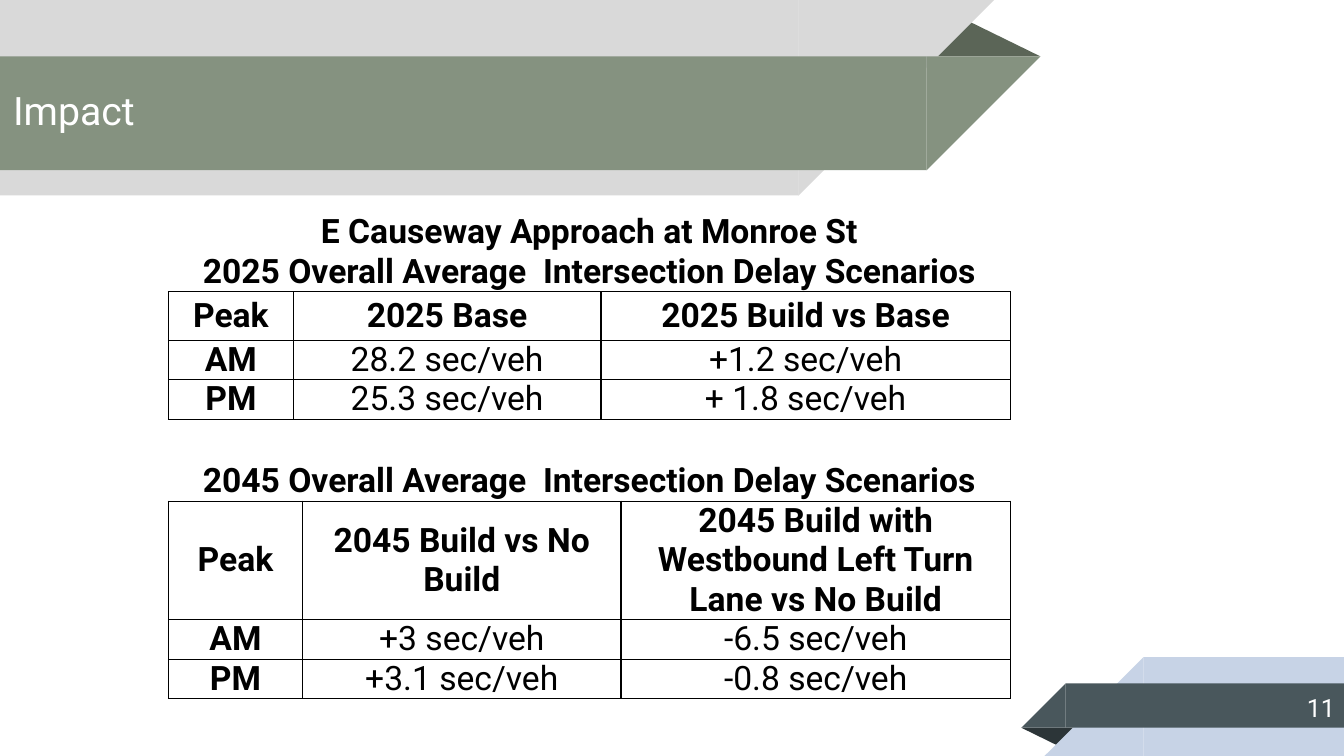
from dataclasses import dataclass

from lxml import etree
from pptx import Presentation
from pptx.dml.color import RGBColor
from pptx.enum.shapes import MSO_SHAPE
from pptx.enum.text import MSO_ANCHOR, PP_ALIGN
from pptx.oxml.ns import qn
from pptx.slide import Slide
from pptx.util import Inches, Pt

RECTANGLE = MSO_SHAPE.RECTANGLE
RIGHT_TRIANGLE = MSO_SHAPE.RIGHT_TRIANGLE
TRIANGLE = MSO_SHAPE.ISOSCELES_TRIANGLE
MIDDLE, BOTTOM, TOP = MSO_ANCHOR.MIDDLE, MSO_ANCHOR.BOTTOM, MSO_ANCHOR.TOP
LEFT, CENTER, RIGHT = PP_ALIGN.LEFT, PP_ALIGN.CENTER, PP_ALIGN.RIGHT

FONT = "Roboto"
COLORS = {
    "grey": "D9D9D9", "green": "859280", "green fold": "5B6557",
    "blue": "C7D3E6", "slate": "49575C", "slate fold": "2C3538",
    "white": "FFFFFF", "black": "000000",
}

# The slide is a grid of 160 columns by 90 rows of square cells.
SLIDE_WIDTH, SLIDE_HEIGHT = Inches(13.33), Inches(7.5)
GRID_COLUMNS = 160
CELL = SLIDE_HEIGHT / 90
LINE_ROWS = 4.68
TITLE_ROWS = 2
HEADER_ROW = TITLE_ROWS


@dataclass(frozen=True)
class Fold:
    left: float
    top: float
    width: float
    height: float
    color: str
    rotation: int


@dataclass(frozen=True)
class Band:
    """A bar from a slide edge to its slanted end, which starts at column `inner`."""
    inner: float
    top: float
    height: float
    color: str
    from_left: bool


@dataclass(frozen=True)
class DelayTable:
    top: float
    columns: tuple[float, ...]
    header_rows: float
    titles: tuple[str, str]
    body: tuple[tuple[str, str, str], ...]


@dataclass(frozen=True)
class Label:
    text: str
    left: float
    top: float
    width: float
    height: float
    size: int
    align: PP_ALIGN
    anchor: MSO_ANCHOR
    margins: tuple[float, float]


DECORATION = (
    Fold(110.16, 2.16, 13.68, 4.56, "green fold", 0),
    Band(95.04, 0, 23.28, "grey", True),
    Band(110.28, 6.72, 13.56, "green", True),
    Fold(121.56, 86.64, 6.84, 2.28, "slate fold", 180),
    Band(136.08, 78.24, 11.76, "blue", False),
    Band(126.84, 81.36, 5.28, "slate", False),
)
TABLE_LEFT = 20.04
TABLES = (
    DelayTable(25.32, (14.88, 36.6, 48.72), 5.76,
               ("E Causeway Approach at Monroe St",
                "2025 Overall Average  Intersection Delay Scenarios"),
               (("Peak", "2025 Base", "2025 Build vs Base"),
                ("AM", "28.2 sec/veh", "+1.2 sec/veh"),
                ("PM", "25.3 sec/veh", "+ 1.8 sec/veh"))),
    DelayTable(50.28, (15.96, 37.92, 46.32), 3 * LINE_ROWS,
               ("", "2045 Overall Average  Intersection Delay Scenarios"),
               (("Peak", "2045 Build vs No Build",
                 "2045 Build with Westbound Left Turn Lane vs No Build"),
                ("AM", "+3 sec/veh", "-6.5 sec/veh"),
                ("PM", "+3.1 sec/veh", "-0.8 sec/veh"))),
)
LABELS = (
    Label("Impact", 0, 6.36, 129.36, 13.44, 28, LEFT, MIDDLE, (0.13, 0.13)),
    Label("11", 127.08, 81.84, 33, 4.8, 18, RIGHT, TOP, (0.1, 0.05)),
)


def grid(*cells: float) -> list[int]:
    return [round(count * CELL) for count in cells]


def add_filled_shape(slide: Slide, kind: MSO_SHAPE, box: tuple[float, ...], color: str,
                     rotation: int = 0, flip: bool = False):
    shape = slide.shapes.add_shape(kind, *grid(*box))
    shape.shadow.inherit = False
    shape.fill.solid()
    shape.fill.fore_color.rgb = RGBColor.from_string(COLORS[color])
    shape.line.fill.background()
    shape.rotation = rotation
    if flip:
        shape._element.spPr.find(qn("a:xfrm")).set("flipH", "1")
    return shape


def add_fold(slide: Slide, fold: Fold) -> None:
    box = (fold.left, fold.top, fold.width, fold.height)
    shape = add_filled_shape(slide, TRIANGLE, box, fold.color, fold.rotation)
    shape.adjustments[0] = 0.32


def add_band(slide: Slide, band: Band) -> None:
    bar_left, bar_width = (0, band.inner) if band.from_left else (
        band.inner, GRID_COLUMNS - band.inner)
    tip_left = band.inner if band.from_left else band.inner - band.height
    rotation = 180 if band.from_left else 0
    add_filled_shape(slide, RECTANGLE, (bar_left, band.top, bar_width, band.height), band.color)
    add_filled_shape(slide, RIGHT_TRIANGLE, (tip_left, band.top, band.height, band.height),
                     band.color, rotation, flip=True)


def format_text(text_frame, size: int, color: str, align: PP_ALIGN, bold: bool = False) -> None:
    for paragraph in text_frame.paragraphs:
        paragraph.alignment = align
        for run in paragraph.runs:
            run.font.name = FONT
            run.font.size = Pt(size)
            run.font.bold = bold
            run.font.color.rgb = RGBColor.from_string(COLORS[color])


def add_label(slide: Slide, label: Label) -> None:
    box = slide.shapes.add_textbox(*grid(label.left, label.top, label.width, label.height))
    text_frame = box.text_frame
    text_frame.word_wrap = True
    text_frame.vertical_anchor = label.anchor
    text_frame.margin_left = text_frame.margin_right = Inches(label.margins[0])
    text_frame.margin_top = text_frame.margin_bottom = Inches(label.margins[1])
    text_frame.text = label.text
    format_text(text_frame, label.size, "white", label.align)


def set_borders(cell, visible: str) -> None:
    """Draw the sides named in `visible` (L, R, T, B) and hide the others."""
    properties = cell._tc.get_or_add_tcPr()
    for side in "LRTB":
        line = etree.SubElement(properties, qn(f"a:ln{side}"), w=str(Pt(1)))
        if side in visible:
            fill = etree.SubElement(line, qn("a:solidFill"))
            etree.SubElement(fill, qn("a:srgbClr"), val=COLORS["black"])
        else:
            etree.SubElement(line, qn("a:noFill"))


def add_delay_table(slide: Slide, content: DelayTable) -> None:
    heights = [LINE_ROWS] * TITLE_ROWS + [content.header_rows] + [LINE_ROWS] * 2
    frame = slide.shapes.add_table(len(heights), len(content.columns), *grid(
        TABLE_LEFT, content.top, sum(content.columns), sum(heights)))
    table = frame.table
    table.first_row = table.horz_banding = False
    for column, width in zip(table.columns, grid(*content.columns)):
        column.width = width
    for row, height in zip(table.rows, grid(*heights)):
        row.height = height

    texts = [(title, "", "") for title in content.titles] + list(content.body)
    for row_index, row_texts in enumerate(texts):
        for column_index, text in enumerate(row_texts):
            cell = table.cell(row_index, column_index)
            cell.margin_left = cell.margin_right = Inches(0.07)
            cell.margin_top = cell.margin_bottom = 0
            cell.vertical_anchor = MIDDLE if row_index == HEADER_ROW else BOTTOM
            set_borders(cell, ("", "B")[row_index] if row_index < TITLE_ROWS else "LRTB")
            cell.fill.background()
            cell.text_frame.text = text
            bold = row_index <= HEADER_ROW or column_index == 0
            format_text(cell.text_frame, 24, "black", CENTER, bold)
    for row_index in range(TITLE_ROWS):
        table.cell(row_index, 0).merge(table.cell(row_index, len(content.columns) - 1))


def main() -> None:
    presentation = Presentation()
    presentation.slide_width, presentation.slide_height = SLIDE_WIDTH, SLIDE_HEIGHT
    slide = presentation.slides.add_slide(presentation.slide_layouts[6])
    for part in DECORATION:
        if isinstance(part, Fold):
            add_fold(slide, part)
        else:
            add_band(slide, part)
    for content in TABLES:
        add_delay_table(slide, content)
    for label in LABELS:
        add_label(slide, label)
    presentation.save("out.pptx")


if __name__ == "__main__":
    main()
